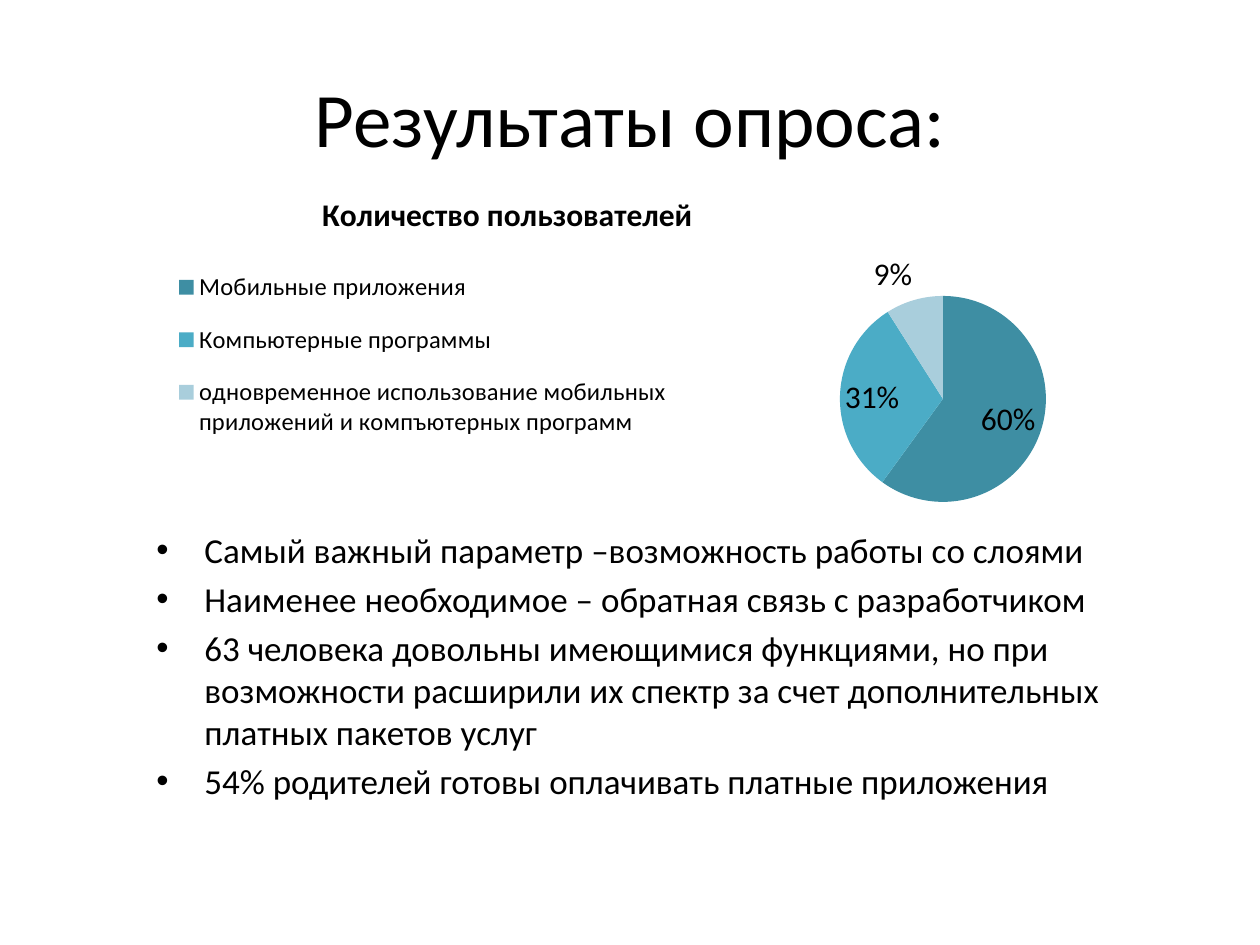
from lxml import etree
from pptx import Presentation
from pptx import util as u
from pptx.chart.data import CategoryChartData
from pptx.dml.color import RGBColor
from pptx.enum import chart as kinds, text
from pptx.oxml import parse_xml
from pptx.oxml.ns import nsdecls, qn

PX = 914400 / 126
FONT = "Calibri"


def px(length):
    return u.Emu(round(length * PX))


def style(font, size, bold=False, color="000000"):
    font.name, font.size, font.bold = FONT, u.Pt(size), bold
    font.color.rgb = RGBColor.from_string(color)


deck = Presentation()
deck.slide_width, deck.slide_height = px(1260), px(945)
page = deck.slides.add_slide(deck.slide_layouts[5])

# Title
title = page.shapes.title
title.left, title.top, title.width, title.height = px(63), px(38), px(1134), px(157)
title.text_frame.vertical_anchor = text.MSO_ANCHOR.MIDDLE
para = title.text_frame.paragraphs[0]
para.alignment = text.PP_ALIGN.CENTER
span = para.add_run()
span.text = "Результаты опроса:"
style(span.font, 44)

# Findings
findings = [
    "Самый важный параметр –возможность работы со слоями",
    "Наименее необходимое – обратная связь с разработчиком",
    "63 человека довольны имеющимися функциями, но при возможности расширили "
    "их спектр за счет дополнительных платных пакетов услуг",
    "54% родителей готовы оплачивать платные приложения",
]
box = page.shapes.add_textbox(px(144), px(522), px(1053), px(292))
frame = box.text_frame
frame.word_wrap = True
for index, finding in enumerate(findings):
    para = frame.add_paragraph() if index else frame.paragraphs[0]
    props = para._p.get_or_add_pPr()
    props.set("marL", str(px(48)))
    props.set("indent", str(-px(48)))
    etree.SubElement(props, qn("a:buFont")).set("typeface", "Arial")
    etree.SubElement(props, qn("a:buChar")).set("char", "•")
    para.space_before = u.Pt(4 if index else 0)
    span = para.add_run()
    span.text = finding
    style(span.font, 20)

# Pie chart
CHART_LEFT, CHART_TOP, CHART_WIDTH, CHART_HEIGHT = 154, 165, 1062, 357
data = CategoryChartData()
data.categories = [
    "Мобильные приложения",
    "Компьютерные программы",
    "одновременное использование мобильных приложений и компъютерных программ",
]
data.add_series("Количество пользователей", (60, 31, 9))
chart = page.shapes.add_chart(
    kinds.XL_CHART_TYPE.PIE, px(CHART_LEFT), px(CHART_TOP),
    px(CHART_WIDTH), px(CHART_HEIGHT), data).chart
style(chart.font, 10)

chart.has_title = True
span = chart.chart_title.text_frame.paragraphs[0].add_run()
span.text = "Количество пользователей"
style(span.font, 18, bold=True)

chart.has_legend = True
chart.legend.position = kinds.XL_LEGEND_POSITION.LEFT
chart.legend.include_in_layout = False
style(chart.legend.font, 14)

plot = chart.plots[0]
plot.vary_by_categories = True
for index, color in enumerate(["3E8EA3", "4BACC6", "A9CEDC"]):
    fill = plot.series[0].points[index].format.fill
    fill.solid()
    fill.fore_color.rgb = RGBColor.from_string(color)

plot.has_data_labels = True
labels = plot.data_labels
labels.show_value, labels.show_percentage = False, True
labels.number_format, labels.number_format_is_linked = "0%", False
labels.position = kinds.XL_LABEL_POSITION.BEST_FIT
style(labels.font, 18)

# Places of the chart parts: left, top, width, height on the page
places = [
    (chart.chart_title._element, (317, 187, None, None)),
    (chart.legend._element, (162, 250, 520, 210)),
    (chart._chartSpace.chart.plotArea, (840, 296, 206, 206)),
]
for part, (left, top, width, height) in places:
    for old in part.findall(qn("c:layout")):
        part.remove(old)
    layout = parse_xml(f"<c:layout {nsdecls('c')}><c:manualLayout/></c:layout>")
    settings = [("xMode", "edge"), ("yMode", "edge"),
                ("x", round((left - CHART_LEFT) / CHART_WIDTH, 3)),
                ("y", round((top - CHART_TOP) / CHART_HEIGHT, 3))]
    if width:
        settings += [("w", round(width / CHART_WIDTH, 3)),
                     ("h", round(height / CHART_HEIGHT, 3))]
    if part.tag == qn("c:plotArea"):
        settings.insert(0, ("layoutTarget", "inner"))
    for name, value in settings:
        etree.SubElement(layout[0], qn("c:" + name)).set("val", str(value))
    before = part.find(qn("c:tx"))
    if before is None:
        before = part.find(qn("c:legendPos"))
    part.insert(0 if before is None else part.index(before) + 1, layout)

deck.save("out.pptx")
